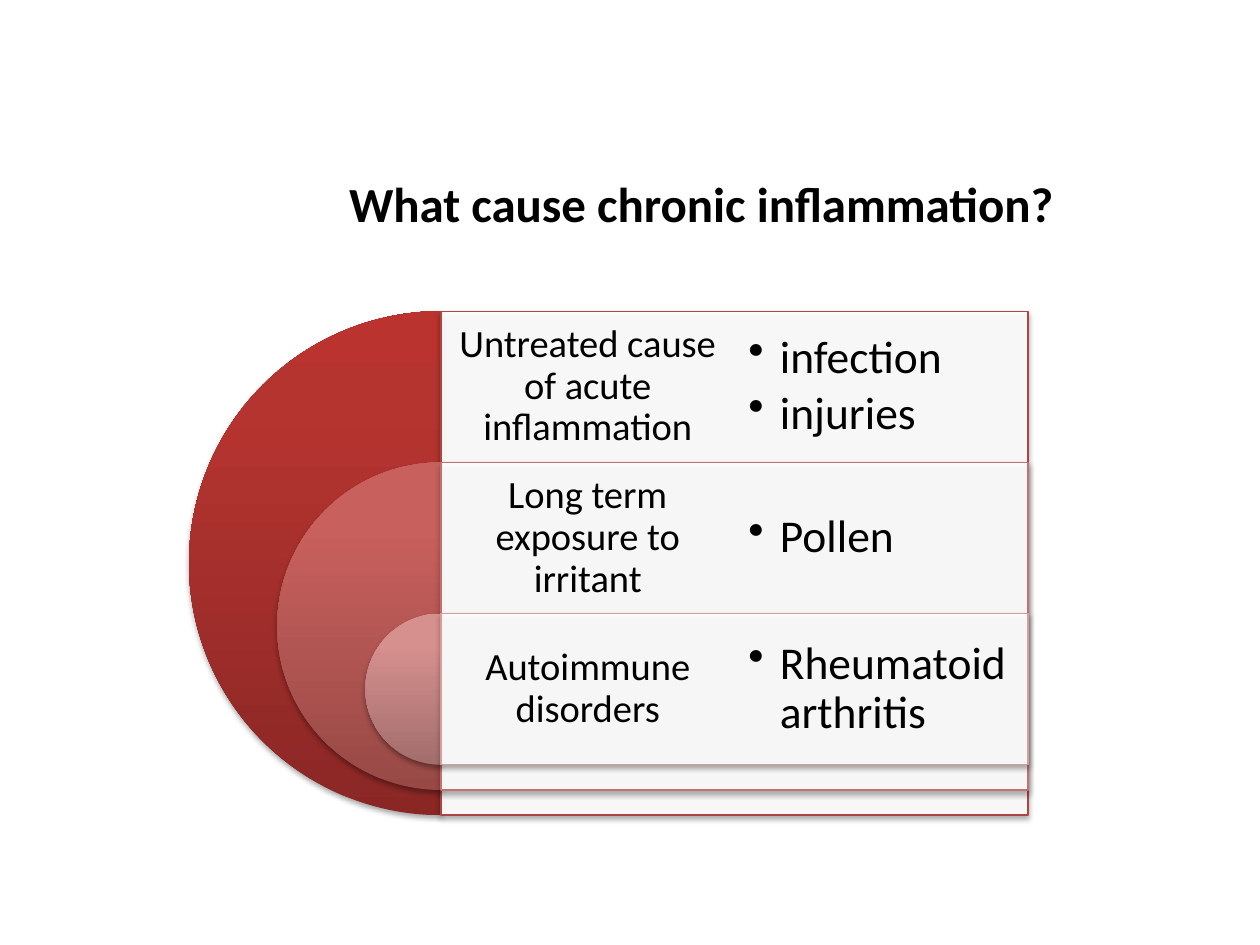
"""Build a slide on the causes of chronic inflammation."""
from copy import deepcopy
from dataclasses import dataclass

from pptx import Presentation
from pptx import util as u
from pptx.dml.color import RGBColor
from pptx.enum import shapes, text
from pptx.oxml import parse_xml
from pptx.oxml.ns import nsdecls, qn

HUES = {"ink": "000000", "panel": "FFFFFF"}
FONT = "Calibri"
MID, TOP, ROW, COL = 3.5, 2.47, 1.2, 2.33


@dataclass
class Cause:
    """One ring of the diagram with its label and examples."""
    label: str
    items: list[str]
    size: float
    line: str
    stops: tuple[str, str, str]


CAUSES = [
    Cause("Untreated cause of acute inflammation", ["infection", "injuries"],
          4, "AD4643", ("8A2725", "B63430", "BA332E")),
    Cause("Long term exposure to irritant", ["Pollen"],
          2.6, "C3706E", ("984946", "C8605D", "CB5E5B")),
    Cause("Autoimmune disorders", ["Rheumatoid arthritis"],
          1.2, "D59E9D", ("A26E6C", "D6908E", "D88F8E")),
]


def shade(shape) -> None:
    """Give a shape a soft shadow below it."""
    shape.shadow.inherit = False
    shape._element.spPr.find(qn("a:effectLst")).append(parse_xml(
        f'<a:outerShdw {nsdecls("a")} blurRad="{u.Pt(3.1)}" dist="{u.Pt(1.8)}" '
        f'dir="5400000" rotWithShape="0"><a:srgbClr val="{HUES["ink"]}">'
        '<a:alpha val="35000"/></a:srgbClr></a:outerShdw>'))


def add_pie(slide, cause: Cause, top: float) -> None:
    """Draw the left half disc of a cause."""
    size = u.Inches(cause.size)
    pie = slide.shapes.add_shape(
        shapes.MSO_SHAPE.PIE, u.Inches(MID - cause.size / 2), u.Inches(top), size, size)
    pie.adjustments[0], pie.adjustments[1] = 54, 162
    pie.line.fill.background()
    pie.fill.gradient()
    pie.fill.gradient_angle = 90
    stops = pie._element.spPr.find(".//" + qn("a:gsLst"))
    stops.append(deepcopy(stops[-1]))
    for stop, hue, place in zip(pie.fill.gradient_stops, cause.stops, (0, 0.8, 1)):
        stop.color.rgb = RGBColor.from_string(hue)
        stop.position = place
    shade(pie)


def add_panel(slide, cause: Cause, top: float) -> None:
    """Draw the pale panel beside a half disc."""
    panel = slide.shapes.add_shape(
        shapes.MSO_SHAPE.RECTANGLE, u.Inches(MID), u.Inches(top),
        u.Inches(2 * COL), u.Inches(cause.size))
    panel.fill.solid()
    panel.fill.fore_color.rgb = RGBColor.from_string(HUES["panel"])
    hue = panel._element.spPr.find(qn("a:solidFill"))[0]
    hue.append(parse_xml(f'<a:alpha {nsdecls("a")} val="90000"/>'))
    panel.line.color.rgb = RGBColor.from_string(cause.line)
    panel.line.width = u.Pt(0.75)
    shade(panel)


def style(para, size: float, bold: bool = False) -> None:
    """Set the font of a paragraph."""
    font = para.font
    font.name, font.size, font.bold = FONT, u.Pt(size), bold
    font.color.rgb = RGBColor.from_string(HUES["ink"])


def add_text(slide, left: float, top: float, lines: list[str],
             size: float, inset: float, listed: bool) -> None:
    """Write one cell as a centred label or a bulleted list."""
    box = slide.shapes.add_textbox(
        u.Inches(left), u.Inches(top), u.Inches(COL), u.Inches(ROW))
    frame = box.text_frame
    frame.word_wrap = True
    frame.vertical_anchor = text.MSO_ANCHOR.MIDDLE
    frame.margin_left = frame.margin_right = u.Inches(inset)
    frame.margin_top = frame.margin_bottom = u.Inches(inset)
    frame.text = "\n".join(lines)
    for index, para in enumerate(frame.paragraphs):
        style(para, size)
        para.line_spacing = 0.9
        if not listed:
            para.alignment = text.PP_ALIGN.CENTER
            continue
        para.level = 1
        if index:
            para.space_before = u.Pt(3.9)
        props = para._p.get_or_add_pPr()
        props.set("marL", str(u.Inches(0.25)))
        props.set("indent", str(-u.Inches(0.25)))
        props.insert_element_before(
            parse_xml(f'<a:buChar {nsdecls("a")} char="•"/>'), "a:defRPr")


def add_title(slide, words: str) -> None:
    """Place and format the slide title."""
    title = slide.shapes.title
    title.left, title.top = u.Inches(2.67), u.Inches(1.33)
    title.width, title.height = u.Inches(7.5), u.Inches(0.57)
    frame = title.text_frame
    frame.text = words
    frame.vertical_anchor = text.MSO_ANCHOR.TOP
    frame.auto_size = text.MSO_AUTO_SIZE.NONE
    para = frame.paragraphs[0]
    para.alignment = text.PP_ALIGN.LEFT
    style(para, 28, True)


def main() -> None:
    """Build and save the slide."""
    deck = Presentation()
    deck.slide_width, deck.slide_height = u.Inches(10), u.Inches(7.5)
    slide = deck.slides.add_slide(deck.slide_layouts[5])
    add_title(slide, "What cause chronic inflammation?")
    for index, cause in enumerate(CAUSES):
        top = TOP + index * ROW
        add_pie(slide, cause, top)
        add_panel(slide, cause, top)
        add_text(slide, MID, top, [cause.label], 22, 0.09, False)
        add_text(slide, MID + COL, top, cause.items, 26, 0.11, True)
    deck.save("out.pptx")


if __name__ == "__main__":
    main()
